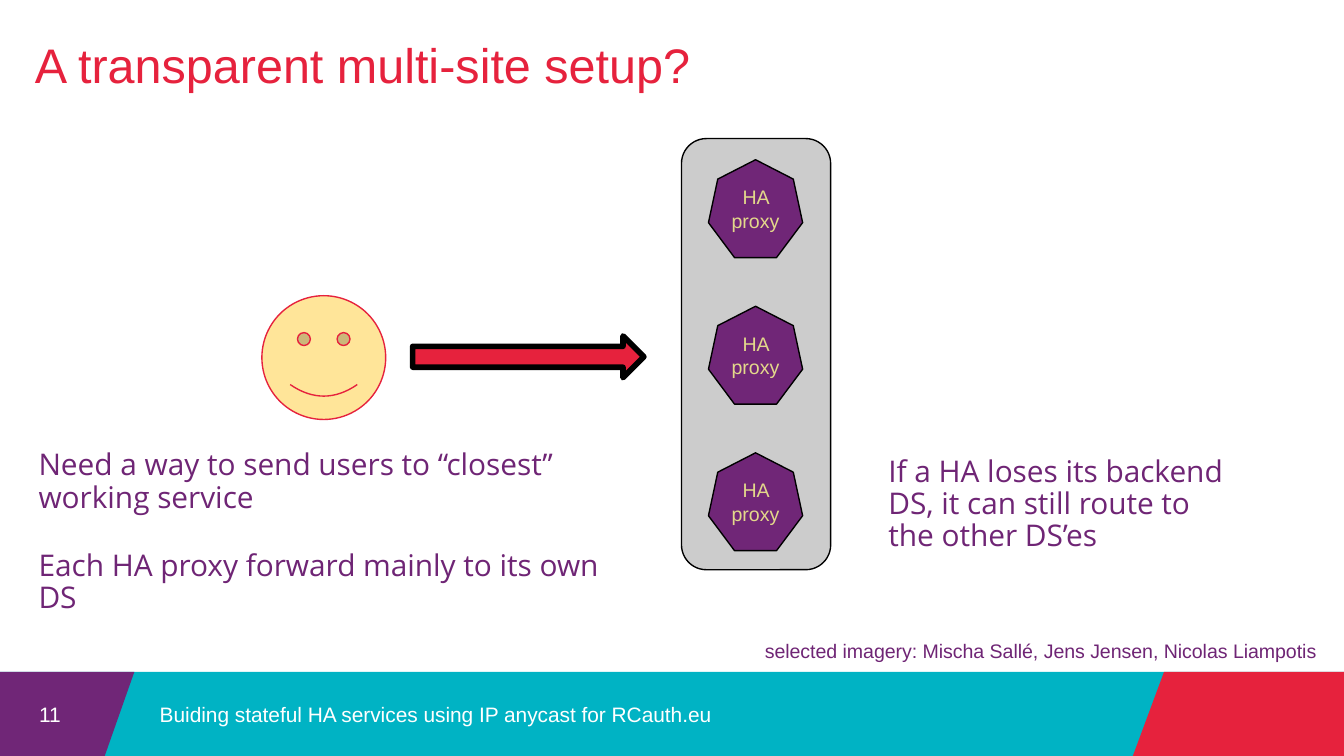
from pptx import Presentation
from pptx.dml.color import RGBColor
from pptx.enum.shapes import MSO_SHAPE as Shape
from pptx.enum.text import MSO_ANCHOR as Anchor, PP_ALIGN as Align
from pptx.util import Cm, Pt

COLORS = {
    "teal": "00B3C4",
    "purple": "702677",
    "violet": "6F2575",
    "red": "E6223D",
    "grey": "CCCCCC",
    "cream": "FFE599",
    "sand": "E3D88B",
    "black": "000000",
    "white": "FFFFFF",
}
WIDTH, HEIGHT = 25.4, 14.29
BAND = 12.7


def color(name):
    return RGBColor.from_string(COLORS[name])


def write(frame, text, size=10.5, ink="violet", font="Arial", align=Align.LEFT,
          anchor=Anchor.TOP, pad=(0.25, 0.25), wrap=True, lead=None, gap=0):
    """Fill a text frame, one paragraph per line of text."""
    frame.word_wrap = wrap
    frame.vertical_anchor = anchor
    frame.margin_left = frame.margin_right = Cm(pad[0])
    frame.margin_top = frame.margin_bottom = Cm(pad[1])
    for i, line in enumerate(text.split("\n")):
        para = frame.add_paragraph() if i else frame.paragraphs[0]
        para.text = line
        para.alignment = align
        para.space_before = Pt(gap if i else 0)
        if lead:
            para.line_spacing = lead
        para.font.size = Pt(size)
        para.font.name = font
        para.font.color.rgb = color(ink)


class Deck:
    def __init__(self):
        self.prs = Presentation()
        self.prs.slide_width = Cm(WIDTH)
        self.prs.slide_height = Cm(HEIGHT)
        self.slide = self.prs.slides.add_slide(self.prs.slide_layouts[5])
        self.shapes = self.slide.shapes

    def paint(self, shape, fill, line=None, weight=0.75):
        shape.shadow.inherit = False
        shape.fill.solid()
        shape.fill.fore_color.rgb = color(fill)
        if line:
            shape.line.color.rgb = color(line)
            shape.line.width = Pt(weight)
        else:
            shape.line.fill.background()
        return shape

    def title(self, text, box, **style):
        shape = self.shapes.title
        shape.left, shape.top, shape.width, shape.height = map(Cm, box)
        write(shape.text_frame, text, **style)

    def shape(self, kind, box, fill, **edge):
        return self.paint(self.shapes.add_shape(kind, *map(Cm, box)), fill, **edge)

    def outline(self, points, fill):
        start, *rest = [(Cm(x), Cm(y)) for x, y in points]
        path = self.shapes.build_freeform(*start)
        path.add_line_segments(rest, close=True)
        return self.paint(path.convert_to_shape(), fill)

    def text(self, text, box, **style):
        write(self.shapes.add_textbox(*map(Cm, box)).text_frame, text, **style)


def main():
    deck = Deck()
    deck.shape(Shape.RECTANGLE, (0, BAND, WIDTH, HEIGHT - BAND), "teal")
    deck.outline([(0, BAND), (2.54, BAND), (1.98, HEIGHT), (0, HEIGHT)], "purple")
    deck.outline([(22, BAND), (WIDTH, BAND), (WIDTH, HEIGHT), (21.41, HEIGHT)], "red")

    foot = dict(size=11.2, ink="white", anchor=Anchor.MIDDLE)
    deck.text("11", (0.74, 13.26, 0.48, 0.48), pad=(0, 0), wrap=False, **foot)
    deck.text("Buiding stateful HA services using IP anycast for RCauth.eu",
              (2.77, 12.8, 18.29, 1.4), pad=(0.25, 0.13), **foot)
    deck.title("A transparent multi-site setup?", (0.66, 0.66, 24.08, 1.12),
               size=26, ink="red", pad=(0, 0))

    deck.shape(Shape.ROUNDED_RECTANGLE, (12.88, 2.62, 2.82, 8.15), "grey", line="black")
    for i in range(3):
        proxy = deck.shape(Shape.HEPTAGON, (13.39, 3.02 + 2.77 * i, 1.78, 1.85),
                           "purple", line="black")
        write(proxy.text_frame, "HA proxy", ink="sand", align=Align.CENTER,
              anchor=Anchor.MIDDLE)

    deck.shape(Shape.SMILEY_FACE, (4.95, 5.59, 2.34, 2.34), "cream", line="red")
    deck.shape(Shape.RIGHT_ARROW, (7.8, 6.35, 4.37, 0.79), "red",
               line="black", weight=3)

    note = dict(size=16, font="Open Sans", lead=0.9)
    deck.text("Need a way to send users to “closest” working service\n"
              "Each HA proxy forward mainly to its own DS",
              (0.48, 8.26, 11.86, 3.25), gap=19.5, **note)
    deck.text("If a HA loses its backend DS, it can still route to the other DS’es",
              (16.54, 8.38, 6.93, 2.57), **note)
    deck.text("selected imagery: Mischa Sallé, Jens Jensen, Nicolas Liampotis",
              (14.1, 11.94, 11.15, 0.71), align=Align.CENTER, pad=(0.25, 0.13),
              wrap=False)
    deck.prs.save("out.pptx")


if __name__ == "__main__":
    main()
